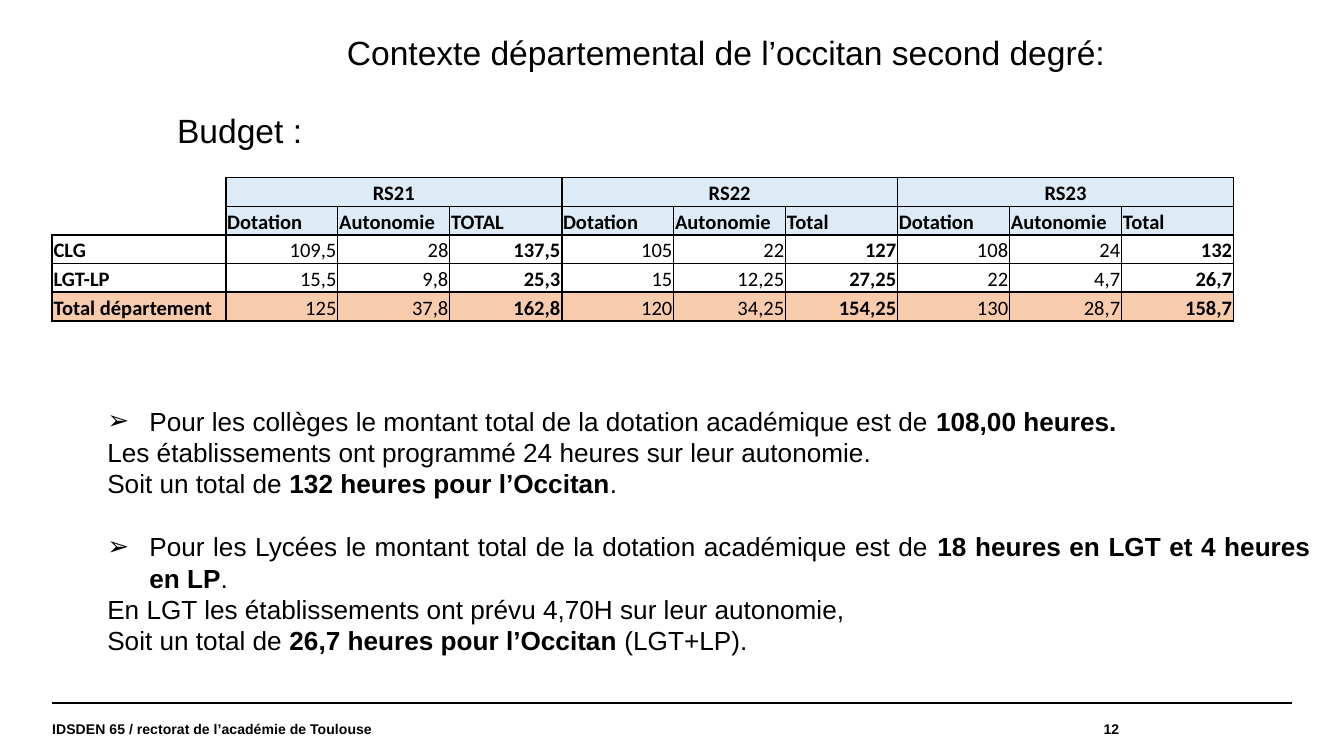
from lxml.etree import SubElement
from pptx import Presentation
from pptx.dml.color import RGBColor
from pptx.enum.shapes import MSO_CONNECTOR as CONN
from pptx.enum.text import MSO_ANCHOR as ANCHOR, MSO_AUTO_SIZE as AUTO, PP_ALIGN as AL
from pptx.oxml.ns import qn
from pptx.util import Pt

BLACK = RGBColor(0x00, 0x00, 0x00)
BLUE = RGBColor(0xDD, 0xEB, 0xF7)
ORANGE = RGBColor(0xF8, 0xCB, 0xAD)

ROWS = [
    ["", "RS21", "", "", "RS22", "", "", "RS23", "", ""],
    ["", "Dotation", "Autonomie", "TOTAL", "Dotation", "Autonomie", "Total",
     "Dotation", "Autonomie", "Total"],
    ["CLG", "109,5", "28", "137,5", "105", "22", "127", "108", "24", "132"],
    ["LGT-LP", "15,5", "9,8", "25,3", "15", "12,25", "27,25", "22", "4,7", "26,7"],
    ["Total département", "125", "37,8", "162,8", "120", "34,25", "154,25",
     "130", "28,7", "158,7"],
]
ROW_LINES = [1, 0.5, 1, 0.5, 1, 1]
COL_LINES = [1 if c == 0 or c % 3 == 1 else 0.5 for c in range(11)]

COMMENTS = [
    (True, 0, [("Pour les collèges le montant total de la dotation académique est de ", False),
               ("108,00 heures.", True)]),
    (False, 0, [("Les établissements ont programmé 24 heures sur leur autonomie.", False)]),
    (False, 0, [("Soit un total de ", False), ("132 heures pour l’Occitan", True), (".", False)]),
    (True, 16.8, [("Pour les Lycées le montant total de la dotation académique est de ", False),
                  ("18 heures en LGT et 4 heures en LP", True), (".", False)]),
    (False, 0, [("En LGT les établissements ont prévu 4,70H sur leur autonomie,", False)]),
    (False, 0, [("Soit un total de ", False), ("26,7 heures pour l’Occitan ", True),
                ("(LGT+LP).", False)]),
]


class Deck:
    font = "Arial"
    table_font = "Calibri"

    def __init__(self, prs):
        self.s = prs.slides.add_slide(prs.slide_layouts[5])

    def run(self, p, text, size, bold=False, font=None):
        r = p.add_run()
        r.text = text
        r.font.name = font or self.font
        r.font.size = Pt(size)
        r.font.bold = bold
        r.font.color.rgb = BLACK

    def frame(self, sp, anchor=ANCHOR.TOP):
        tf = sp.text_frame
        tf.word_wrap = True
        tf.auto_size = AUTO.NONE
        tf.vertical_anchor = anchor
        return tf

    def box(self, x, y, w, h, anchor=ANCHOR.TOP):
        return self.frame(self.s.shapes.add_textbox(Pt(x), Pt(y), Pt(w), Pt(h)), anchor)

    def title(self, text, x, y, w, h):
        sp = self.s.shapes.title
        sp.left, sp.top, sp.width, sp.height = Pt(x), Pt(y), Pt(w), Pt(h)
        p = self.frame(sp).paragraphs[0]
        p.alignment = AL.LEFT
        self.run(p, text, 18)

    def text(self, text, x, y, w, h, size):
        self.run(self.box(x, y, w, h).paragraphs[0], text, size)

    def footer(self, text, x, y, w, h, align):
        tf = self.box(x, y, w, h, ANCHOR.MIDDLE)
        tf.margin_left = tf.margin_top = tf.margin_right = tf.margin_bottom = 0
        p = tf.paragraphs[0]
        p.alignment = align
        self.run(p, text, 7.5, True)

    def rule(self, x1, x2, y, width):
        ln = self.s.shapes.add_connector(CONN.STRAIGHT, Pt(x1), Pt(y), Pt(x2), Pt(y))
        ln.line.color.rgb = BLACK
        ln.line.width = Pt(width)
        SubElement(ln._element.spPr, qn("a:effectLst"))

    def comments(self, items, x, y, w, h):
        tf = self.box(x, y, w, h)
        tf.margin_top = Pt(20.4)
        for i, (bullet, before, runs) in enumerate(items):
            p = tf.paragraphs[0] if i == 0 else tf.add_paragraph()
            p.level = 1
            p.alignment = AL.JUSTIFY
            p.line_spacing = Pt(16.8)
            p.space_before = Pt(before)
            pPr = p._p.get_or_add_pPr()
            pPr.set("marL", str(Pt(58.5 if bullet else 36)))
            pPr.set("indent", str(Pt(-22.5 if bullet else 0)))
            if bullet:
                SubElement(pPr, qn("a:buFont"), typeface=self.font)
                SubElement(pPr, qn("a:buChar"), char="➢")
            else:
                SubElement(pPr, qn("a:buNone"))
            for text, bold in runs:
                self.run(p, text, 14, bold)

    def borders(self, cell, widths):
        tcPr = cell._tc.get_or_add_tcPr()
        for side, width in zip("LRTB", widths):
            ln = SubElement(tcPr, qn(f"a:ln{side}"), w=str(Pt(width)))
            if width:
                fill = SubElement(ln, qn("a:solidFill"))
                SubElement(fill, qn("a:srgbClr"), val=str(BLACK))
            else:
                SubElement(ln, qn("a:noFill"))

    def cell(self, cell, text, align, bold, fill, widths):
        cell.margin_left = cell.margin_right = cell.margin_top = Pt(0.72)
        cell.margin_bottom = 0
        cell.vertical_anchor = ANCHOR.BOTTOM
        self.borders(cell, widths)
        if fill is None:
            cell.fill.background()
        else:
            cell.fill.solid()
            cell.fill.fore_color.rgb = fill
        p = cell.text_frame.paragraphs[0]
        p.alignment = align
        if text:
            self.run(p, text, 11, bold, self.table_font)
        else:
            SubElement(p._p, qn("a:endParaRPr"), sz="1100")

    def table(self, rows, x, y, col_widths, row_height):
        n, m = len(rows), len(col_widths)
        tbl = self.s.shapes.add_table(n, m, Pt(x), Pt(y), Pt(sum(col_widths)),
                                      Pt(n * row_height)).table
        tbl.first_row = tbl.horz_banding = False
        for col, width in zip(tbl.columns, col_widths):
            col.width = Pt(width)
        for i, values in enumerate(rows):
            tbl.rows[i].height = Pt(row_height)
            for j, text in enumerate(values):
                corner = i < 2 and j == 0
                widths = (0 if corner else COL_LINES[j], COL_LINES[j + 1],
                          0 if corner else ROW_LINES[i], 0 if corner and i == 0 else ROW_LINES[i + 1])
                if i == 0 and j > 0:
                    widths = (1, 1) + widths[2:]
                align = AL.CENTER if i == 0 else AL.RIGHT if i > 1 and j else AL.LEFT
                fill = ORANGE if i == n - 1 else BLUE if i < 2 and j else None
                self.cell(tbl.cell(i, j), text, align, i < 2 or j % 3 == 0, fill, widths)
        for j in range(1, m, 3):
            tbl.cell(0, j).merge(tbl.cell(0, j + 2))


def main():
    prs = Presentation()
    prs.slide_width, prs.slide_height = Pt(720), Pt(405)
    d = Deck(prs)
    d.rule(28, 692, 376.6, 0.8)
    d.footer("IDSDEN 65 / rectorat de l’académie de Toulouse", 28, 376.6, 465, 28, AL.LEFT)
    d.footer("12", 493, 376.6, 106.6, 28, AL.RIGHT)
    d.comments(COMMENTS, 14.4, 196.6, 694.8, 193.7)
    d.title("Contexte départemental de l’occitan second degré:", 178.6, 13.7, 461.5, 29)
    d.table(ROWS, 28, 95, [93] + [60] * 9, 15.4)
    d.text("Budget :", 87.8, 55.4, 232.6, 29, 18)
    prs.save("out.pptx")


if __name__ == "__main__":
    main()
